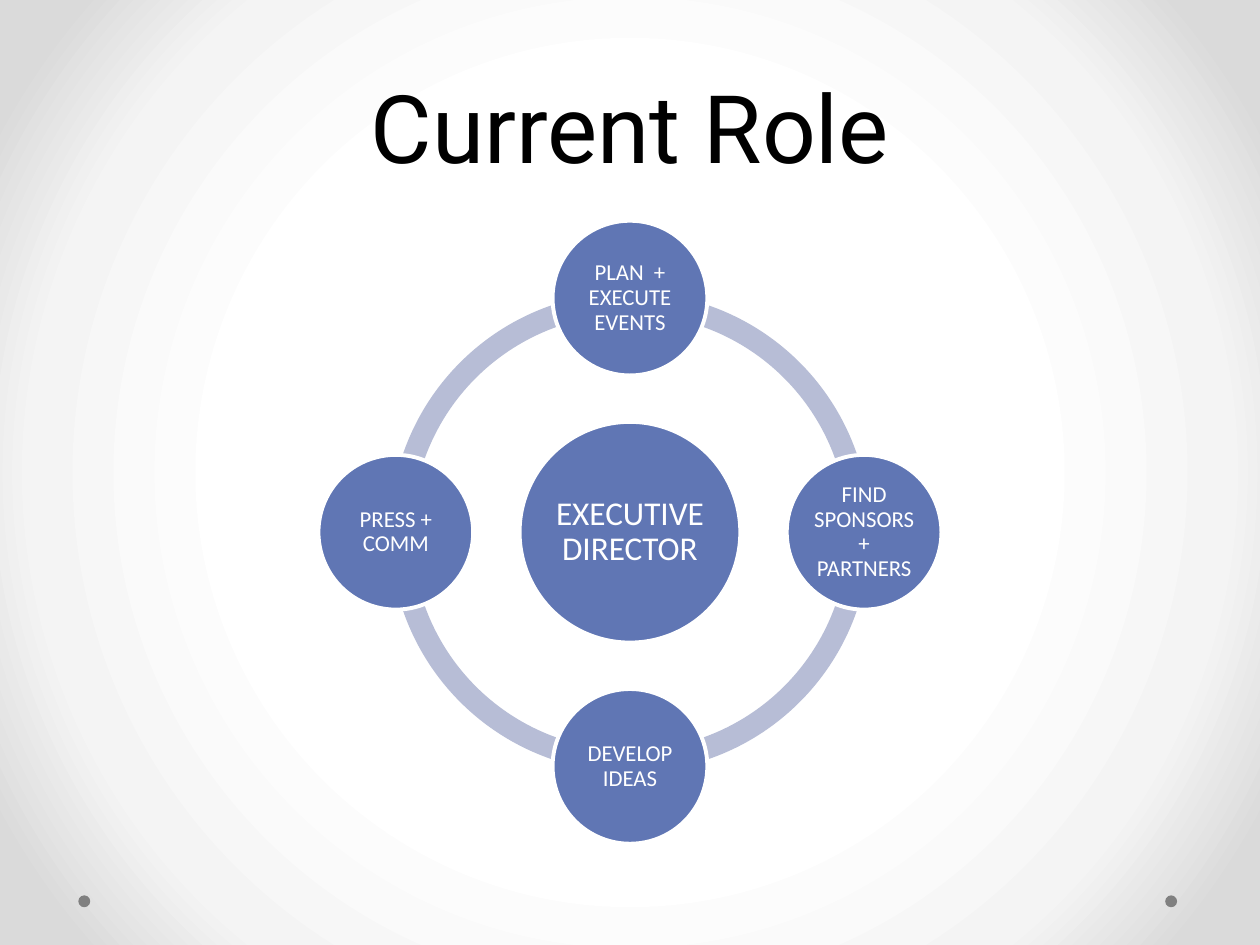
import math
from dataclasses import dataclass

import pptx
import pptx.dml.color
import pptx.enum.shapes
import pptx.enum.text
import pptx.oxml
import pptx.oxml.ns
import pptx.util
from lxml import etree

Cm = pptx.util.Cm
Pt = pptx.util.Pt
MSO_SHAPE = pptx.enum.shapes.MSO_SHAPE
ANCHOR = pptx.enum.text.MSO_ANCHOR


@dataclass(frozen=True)
class Theme:
    circle: str = "6076B4"
    ring: str = "B7BDD6"
    dot: str = "808080"
    white: str = "FFFFFF"
    black: str = "000000"
    backdrop: tuple = ((50, "FFFFFF"), (76, "F4F4F4"), (92, "DADADA"))
    title_font: str = "Roboto"
    body_font: str = "Calibri"
    title_size: int = 54
    hub_size: int = 19
    duty_size: int = 13


THEME = Theme()
DUTIES = ["PLAN  + EXECUTE EVENTS", "FIND SPONSORS + PARTNERS",
          "DEVELOP IDEAS", "PRESS + COMM"]


def rgb(color):
    return pptx.dml.color.RGBColor.from_string(color)


def add_backdrop(s):
    """Radial gradient, light in the middle and grey at the corners."""
    qn = pptx.oxml.ns.qn
    s.background.fill.gradient()
    grad = s.element.find(".//" + qn("a:gradFill"))
    for child in list(grad):
        grad.remove(child)
    stops = etree.SubElement(grad, qn("a:gsLst"))
    for pos, color in THEME.backdrop:
        stop = etree.SubElement(stops, qn("a:gs"), pos=str(pos * 1000))
        etree.SubElement(stop, qn("a:srgbClr"), val=color)
    circle = etree.SubElement(grad, qn("a:path"), {"path": "circle"})
    etree.SubElement(circle, qn("a:fillToRect"),
                     {side: "50000" for side in "ltrb"})


def add_round(s, kind, cx, cy, diameter, color):
    """Borderless shape in a square box centred on (cx, cy), in cm."""
    sp = s.shapes.add_shape(kind, Cm(cx - diameter / 2), Cm(cy - diameter / 2),
                            Cm(diameter), Cm(diameter))
    sp.shadow.inherit = False
    sp.fill.solid()
    sp.fill.fore_color.rgb = rgb(color)
    sp.line.fill.background()
    return sp


def set_text(tf, text, font, size, color, anchor, spacing):
    tf.word_wrap = True
    tf.vertical_anchor = anchor
    tf.text = text
    p = tf.paragraphs[0]
    p.alignment = pptx.enum.text.PP_ALIGN.CENTER
    p.line_spacing = spacing
    f = p.runs[0].font
    f.name, f.size, f.color.rgb = font, Pt(size), rgb(color)


def add_title(s, text, left, top, width, height):
    tb = s.shapes.add_textbox(Cm(left), Cm(top), Cm(width), Cm(height))
    set_text(tb.text_frame, text, THEME.title_font, THEME.title_size,
             THEME.black, ANCHOR.BOTTOM, Pt(58))


def add_labelled_circle(s, text, cx, cy, diameter, size, inset):
    sp = add_round(s, MSO_SHAPE.OVAL, cx, cy, diameter, THEME.circle)
    sp.line.color.rgb = rgb(THEME.white)
    sp.line.width = Pt(2.25)
    tf = sp.text_frame
    tf.margin_left = tf.margin_right = Cm(inset)
    tf.margin_top = tf.margin_bottom = Cm(inset)
    set_text(tf, text, THEME.body_font, size, THEME.white, ANCHOR.MIDDLE, 0.9)


def add_radial_cycle(s, hub, duties, left, top, side):
    """Hub with duties clockwise from the top, joined by a ring of arcs."""
    cx, cy = left + side / 2, top + side / 2
    duty_diameter = 3.12
    orbit = (side - duty_diameter) / 2
    step = 360 / len(duties)
    for i in range(len(duties)):
        arc = add_round(s, MSO_SHAPE.BLOCK_ARC, cx, cy, 9.68, THEME.ring)
        # An angle adjustment of 0.6 is one degree
        arc.adjustments[0] = i * step * 0.6
        arc.adjustments[1] = (i + 1) * step % 360 * 0.6
        arc.adjustments[2] = 0.046
    add_labelled_circle(s, hub, cx, cy, 4.45, THEME.hub_size, 0.08)
    for i, duty in enumerate(duties):
        angle = math.radians(i * step - 90)
        add_labelled_circle(s, duty, cx + orbit * math.cos(angle),
                            cy + orbit * math.sin(angle),
                            duty_diameter, THEME.duty_size, 0.05)


def add_corner_dots(s, left, width, cy):
    for cx in (left, left + width):
        add_round(s, MSO_SHAPE.OVAL, cx, cy, 0.24, THEME.dot)


def main():
    prs = pptx.Presentation()
    prs.slide_width, prs.slide_height = Cm(25.4), Cm(19.05)
    s = prs.slides.add_slide(prs.slide_layouts[6])
    add_backdrop(s)
    add_corner_dots(s, 1.7, 21.91, 18.17)
    add_radial_cycle(s, "EXECUTIVE DIRECTOR", DUTIES, 6.42, 4.45, 12.56)
    add_title(s, "Current Role", 1.27, 0.43, 22.86, 3.38)
    prs.save("out.pptx")


if __name__ == "__main__":
    main()
